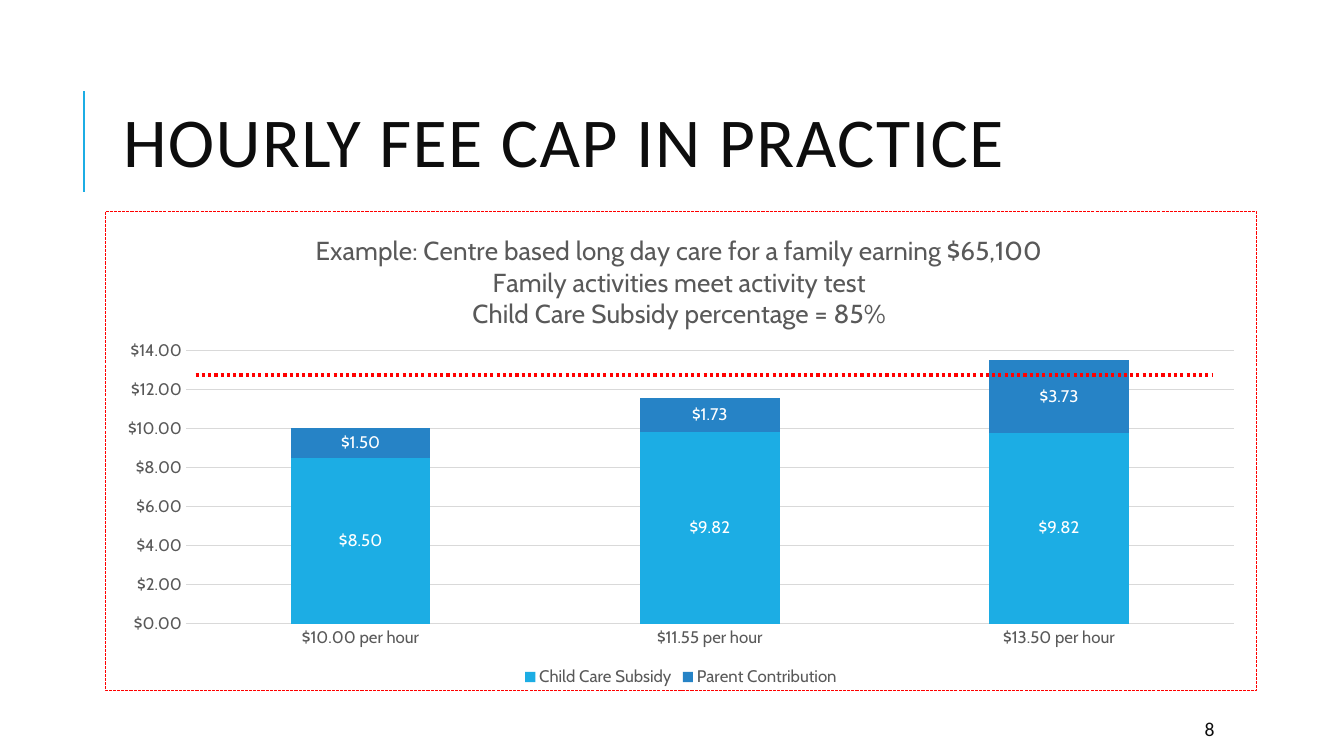
from pptx import Presentation
from pptx.chart.data import CategoryChartData
from pptx.dml.color import RGBColor
from pptx.enum.chart import XL_CHART_TYPE as ChartType, XL_LEGEND_POSITION as LegendSpot, XL_TICK_MARK as Tick
from pptx.enum.dml import MSO_LINE as Dash
from pptx.enum.shapes import MSO_CONNECTOR as Connector
from pptx.enum.text import MSO_ANCHOR as Anchor, MSO_AUTO_SIZE as AutoSize, PP_ALIGN as Align
from pptx.oxml import parse_xml
from pptx.oxml.ns import nsdecls, qn
from pptx.util import Inches, Pt

COLOURS = {"ink": "0D0D0D", "grey": "595959", "grid": "D9D9D9", "white": "FFFFFF",
           "subsidy": "1CADE4", "parent": "2683C6", "cap": "FF0000"}
MONEY = '"$"#,##0.00'


def colour(name):
    return RGBColor.from_string(COLOURS[name])


def write_text(frame, text, font="Calibri", size=14, ink="ink", align=Align.LEFT,
               line_spacing=None, letter_spacing=None):
    for index, line in enumerate(text.split("\n")):
        para = frame.paragraphs[0] if index == 0 else frame.add_paragraph()
        para.alignment = align
        para.line_spacing = line_spacing
        span = para.add_run()
        span.text = line
        span.font.name, span.font.size, span.font.bold = font, Pt(size), False
        span.font.color.rgb = colour(ink)
        if letter_spacing:
            span.font._element.set("spc", str(letter_spacing * 100))


deck = Presentation()
deck.slide_width, deck.slide_height = Inches(13.33), Inches(7.5)
page = deck.slides.add_slide(deck.slide_layouts[5])

# Title
title = page.shapes.title
title.left, title.top, title.width, title.height = map(Inches, (1.12, 0.64, 10.63, 1.64))
title.text_frame.word_wrap = True
title.text_frame.auto_size = AutoSize.NONE
title.text_frame.vertical_anchor = Anchor.MIDDLE
write_text(title.text_frame, "HOURLY FEE CAP IN PRACTICE", size=50,
           line_spacing=0.8, letter_spacing=1)

# Stacked column chart
data = CategoryChartData(number_format=MONEY)
data.categories = ["$10.00 per hour", "$11.55 per hour", "$13.50 per hour"]
data.add_series("Child Care Subsidy", (8.5, 9.82, 9.78))
data.add_series("Parent Contribution", (1.5, 1.73, 3.73))
chart = page.shapes.add_chart(ChartType.COLUMN_STACKED, Inches(1.04), Inches(2.09),
                              Inches(11.43), Inches(4.77), data).chart
chart.font.name, chart.font.size = "Cabin", Pt(12)
chart.font.color.rgb = colour("grey")
chart.has_title = True
write_text(chart.chart_title.text_frame,
           "Example: Centre based long day care for a family earning $65,100\n"
           "Family activities meet activity test\nChild Care Subsidy percentage = 85%",
           font="Cabin", size=18.6, ink="grey", align=Align.CENTER)
chart.has_legend = True
chart.legend.position = LegendSpot.BOTTOM
chart.legend.include_in_layout = False

# Columns and their labels
plot = chart.plots[0]
plot.gap_width, plot.overlap, plot.vary_by_categories = 150, 100, False
for series, fill in zip(plot.series, ("subsidy", "parent")):
    series.format.fill.solid()
    series.format.fill.fore_color.rgb = colour(fill)
    labels = series.data_labels
    labels.show_value = True
    labels.number_format, labels.number_format_is_linked = MONEY, False
    labels.font.name, labels.font.size = "Cabin", Pt(12)
    labels.font.color.rgb = colour("white")
capped_label = plot.series[0].points[2].data_label
write_text(capped_label.text_frame, "$9.82", font="Cabin", size=12, ink="white",
           align=Align.CENTER)

# Axes
hours, dollars = chart.category_axis, chart.value_axis
for axis in (hours, dollars):
    axis.major_tick_mark = axis.minor_tick_mark = Tick.NONE
dollars.minimum_scale, dollars.maximum_scale, dollars.major_unit = 0, 14, 2
dollars.tick_labels.number_format = MONEY
dollars.tick_labels.number_format_is_linked = False
dollars.format.line.fill.background()
for line in (hours.format.line, dollars.major_gridlines.format.line):
    line.color.rgb = colour("grid")
    line.width = Pt(0.75)

# Places of the chart title and plot area, as shares of the chart
chart_part = chart._chartSpace.find(qn("c:chart"))
plot_area, heading = chart_part.find(qn("c:plotArea")), chart_part.find(qn("c:title"))
for parent, index, places in (
        (plot_area, 0, {"x": 0.07, "y": 0.29, "w": 0.91, "h": 0.57}),
        (heading, 1, {"x": 0.18, "y": 0.04})):
    for old in parent.findall(qn("c:layout")):
        parent.remove(old)
    target = '<c:layoutTarget val="inner"/>' if parent is plot_area else ""
    modes = "".join(f'<c:{key}Mode val="edge"/>' for key in "xy")
    shares = "".join(f'<c:{key} val="{share}"/>' for key, share in places.items())
    parent.insert(index, parse_xml(
        f'<c:layout {nsdecls("c")}><c:manualLayout>{target}{modes}{shares}'
        '</c:manualLayout></c:layout>'))

# Dashed chart border
chart_part.addnext(parse_xml(
    f'<c:spPr {nsdecls("c", "a")}><a:noFill/><a:ln w="9525"><a:solidFill>'
    f'<a:srgbClr val="{COLOURS["cap"]}"/></a:solidFill><a:prstDash val="sysDash"/>'
    '</a:ln></c:spPr>'))

# Slide number
box = page.shapes.add_textbox(Inches(11.85), Inches(7.08), Inches(1.06), Inches(0.3))
box.text_frame.word_wrap = True
box.text_frame.vertical_anchor = Anchor.MIDDLE
write_text(box.text_frame, "8")

# Title accent and fee cap line
for ends, ink, width, dash in (
        ((0.83, 1.9, 0.83, 0.9), "subsidy", 1.5, Dash.SOLID),
        ((1.94, 3.72, 12.02, 3.72), "cap", 2.25, Dash.ROUND_DOT)):
    rule = page.shapes.add_connector(Connector.STRAIGHT, *map(Inches, ends))
    rule.line.color.rgb = colour(ink)
    rule.line.width = Pt(width)
    rule.line.dash_style = dash
    rule._element.spPr.append(parse_xml(f'<a:effectLst {nsdecls("a")}/>'))

deck.save("out.pptx")
